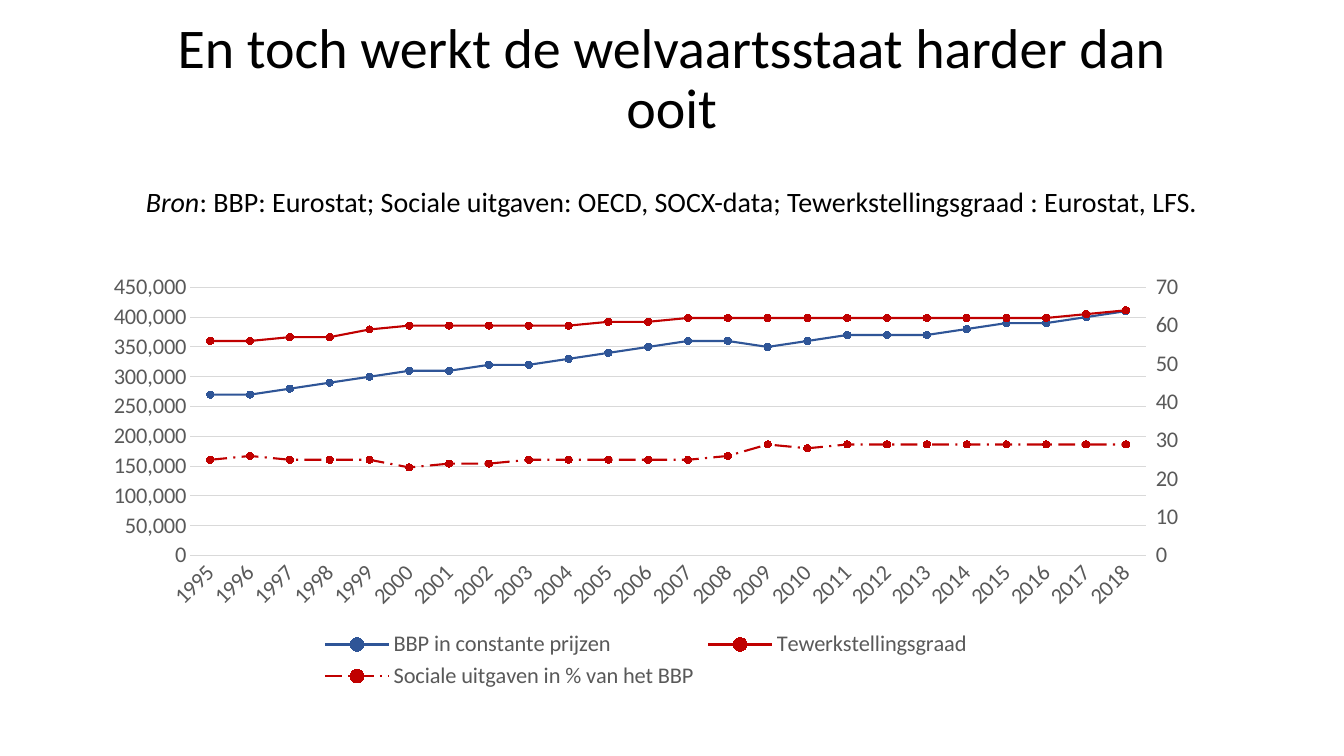
from copy import deepcopy

from pptx import Presentation
from pptx.chart.data import CategoryChartData
from pptx.dml.color import RGBColor
from pptx.enum.chart import XL_CHART_TYPE, XL_LEGEND_POSITION, XL_MARKER_STYLE, XL_TICK_MARK
from pptx.enum.dml import MSO_LINE
from pptx.enum.text import MSO_ANCHOR, MSO_AUTO_SIZE, PP_ALIGN
from pptx.oxml.ns import qn
from pptx.util import Cm, Pt

LINE_MARKERS = XL_CHART_TYPE.LINE_MARKERS
BOTTOM = XL_LEGEND_POSITION.BOTTOM
CIRCLE = XL_MARKER_STYLE.CIRCLE
NO_TICK, TICK_OUT = XL_TICK_MARK.NONE, XL_TICK_MARK.OUTSIDE
SOLID, LONG_DASH_DOT = MSO_LINE.SOLID, MSO_LINE.LONG_DASH_DOT
MIDDLE, CENTER = MSO_ANCHOR.MIDDLE, PP_ALIGN.CENTER
NO_AUTOFIT = MSO_AUTO_SIZE.NONE

FONT = "Calibri"
BLACK, GREY, LIGHT_GREY = "000000", "595959", "D9D9D9"
BLUE, SLATE, RED = "2F5597", "333F50", "C00000"

YEARS = [str(year) for year in range(1995, 2019)]
GDP = [1000 * v for v in (
    270, 270, 280, 290, 300, 310, 310, 320, 320, 330, 340, 350,
    360, 360, 350, 360, 370, 370, 370, 380, 390, 390, 400, 410)]
EMPLOYMENT = [56, 56, 57, 57, 59, 60, 60, 60, 60, 60, 61, 61,
              62, 62, 62, 62, 62, 62, 62, 62, 62, 62, 63, 64]
SOCIAL_SPENDING = [25, 26, 25, 25, 25, 23, 24, 24, 25, 25, 25, 25,
                   25, 26, 29, 28, 29, 29, 29, 29, 29, 29, 29, 29]
# name, values, line colour, marker colour, dash
SERIES = [
    ("BBP in constante prijzen", GDP, BLUE, SLATE, SOLID),
    ("Tewerkstellingsgraad", EMPLOYMENT, RED, RED, SOLID),
    ("Sociale uitgaven in % van het BBP", SOCIAL_SPENDING, RED, RED, LONG_DASH_DOT),
]


def rgb(color):
    return RGBColor.from_string(color)


def set_font(font, size, color):
    font.name, font.size = FONT, Pt(size)
    font.color.rgb = rgb(color)


def set_line(line, color, width):
    line.color.rgb = rgb(color)
    line.width = Pt(width)


def format_text(tf, size):
    tf.word_wrap = True
    tf.auto_size = NO_AUTOFIT
    tf.vertical_anchor = MIDDLE
    p = tf.paragraphs[0]
    p.alignment = CENTER
    p.line_spacing = 0.9
    set_font(p.font, size, BLACK)


def add_title(slide, text):
    sp = slide.shapes.title
    sp.left, sp.top, sp.width, sp.height = Cm(2.79), Cm(0.48), Cm(28.27), Cm(3.1)
    tf = sp.text_frame
    tf.text = text
    tf.margin_left = tf.margin_right = Cm(0.6)
    format_text(tf, 40)


def add_source_line(slide, label, text):
    tf = slide.shapes.add_textbox(Cm(2.79), Cm(4.06), Cm(28.27), Cm(2.13)).text_frame
    p = tf.paragraphs[0]
    r = p.add_run()
    r.text = label
    r.font.italic = True
    p.add_run().text = text
    format_text(tf, 20)
    p.space_after = Pt(6)


def format_axis(axis, tick):
    axis.major_tick_mark = tick
    axis.minor_tick_mark = NO_TICK
    set_font(axis.tick_labels.font, 16, GREY)


def add_right_axis(chart):
    """Move all series but the first to a second line plot on a right-hand axis."""
    plot_area = chart._chartSpace.chart.plotArea
    left_plot = plot_area.find(qn("c:lineChart"))
    right_plot = deepcopy(left_plot)
    left_plot.addnext(right_plot)
    for ser in left_plot.findall(qn("c:ser"))[1:]:
        left_plot.remove(ser)
    right_plot.remove(right_plot.find(qn("c:ser")))

    cat_axis = plot_area.find(qn("c:catAx"))
    val_axis = plot_area.find(qn("c:valAx"))
    right_cat, right_val = deepcopy(cat_axis), deepcopy(val_axis)
    val_axis.addnext(right_val)
    right_val.addnext(right_cat)
    cat_id, val_id = "50010", "50020"
    for ax_id, value in zip(right_plot.findall(qn("c:axId")), (cat_id, val_id)):
        ax_id.set("val", value)
    for axis, own, other in ((right_cat, cat_id, val_id), (right_val, val_id, cat_id)):
        axis.find(qn("c:axId")).set("val", own)
        axis.find(qn("c:crossAx")).set("val", other)
    right_cat.find(qn("c:delete")).set("val", "1")
    right_val.remove(right_val.find(qn("c:majorGridlines")))
    right_val.find(qn("c:axPos")).set("val", "r")
    right_val.find(qn("c:crosses")).set("val", "max")
    right_val.find(qn("c:numFmt")).set("formatCode", "General")
    right_val.find(qn("c:majorTickMark")).set("val", "out")
    right_val.find(qn("c:scaling")).find(qn("c:max")).set("val", "70")
    right_val.find(qn("c:majorUnit")).set("val", "10")


def add_line_chart(slide):
    data = CategoryChartData()
    data.categories = YEARS
    for name, values, *_ in SERIES:
        data.add_series(name, values)
    chart = slide.shapes.add_chart(
        LINE_MARKERS, Cm(2.31), Cm(6.68), Cm(27.94), Cm(10.82), data).chart
    chart.has_title = False
    set_font(chart.font, 16, BLACK)
    chart.has_legend = True
    chart.legend.position = BOTTOM
    chart.legend.include_in_layout = False
    set_font(chart.legend.font, 16, GREY)

    format_axis(chart.category_axis, NO_TICK)
    set_line(chart.category_axis.format.line, LIGHT_GREY, 0.75)
    axis = chart.value_axis
    format_axis(axis, NO_TICK)
    axis.format.line.fill.background()
    set_line(axis.major_gridlines.format.line, LIGHT_GREY, 0.75)
    axis.minimum_scale, axis.maximum_scale, axis.major_unit = 0, 450000, 50000
    axis.tick_labels.number_format = "#,##0"
    axis.tick_labels.number_format_is_linked = False

    chart.plots[0].vary_by_categories = False
    for series, (_, _, color, marker_color, dash) in zip(chart.series, SERIES):
        series.smooth = False
        set_line(series.format.line, color, 1.5)
        series.format.line.dash_style = dash
        marker = series.marker
        marker.style, marker.size = CIRCLE, 5
        marker.format.fill.solid()
        marker.format.fill.fore_color.rgb = rgb(marker_color)
        set_line(marker.format.line, marker_color, 0.75)
    add_right_axis(chart)


def main():
    prs = Presentation()
    prs.slide_width, prs.slide_height = Cm(33.87), Cm(19.05)
    slide = prs.slides.add_slide(prs.slide_layouts.get_by_name("Title Only"))
    add_title(slide, "En toch werkt de welvaartsstaat harder dan ooit")
    add_source_line(slide, "Bron", ": BBP: Eurostat; Sociale uitgaven: OECD, SOCX-data; "
                                   "Tewerkstellingsgraad : Eurostat, LFS.")
    add_line_chart(slide)
    prs.save("out.pptx")


if __name__ == "__main__":
    main()
